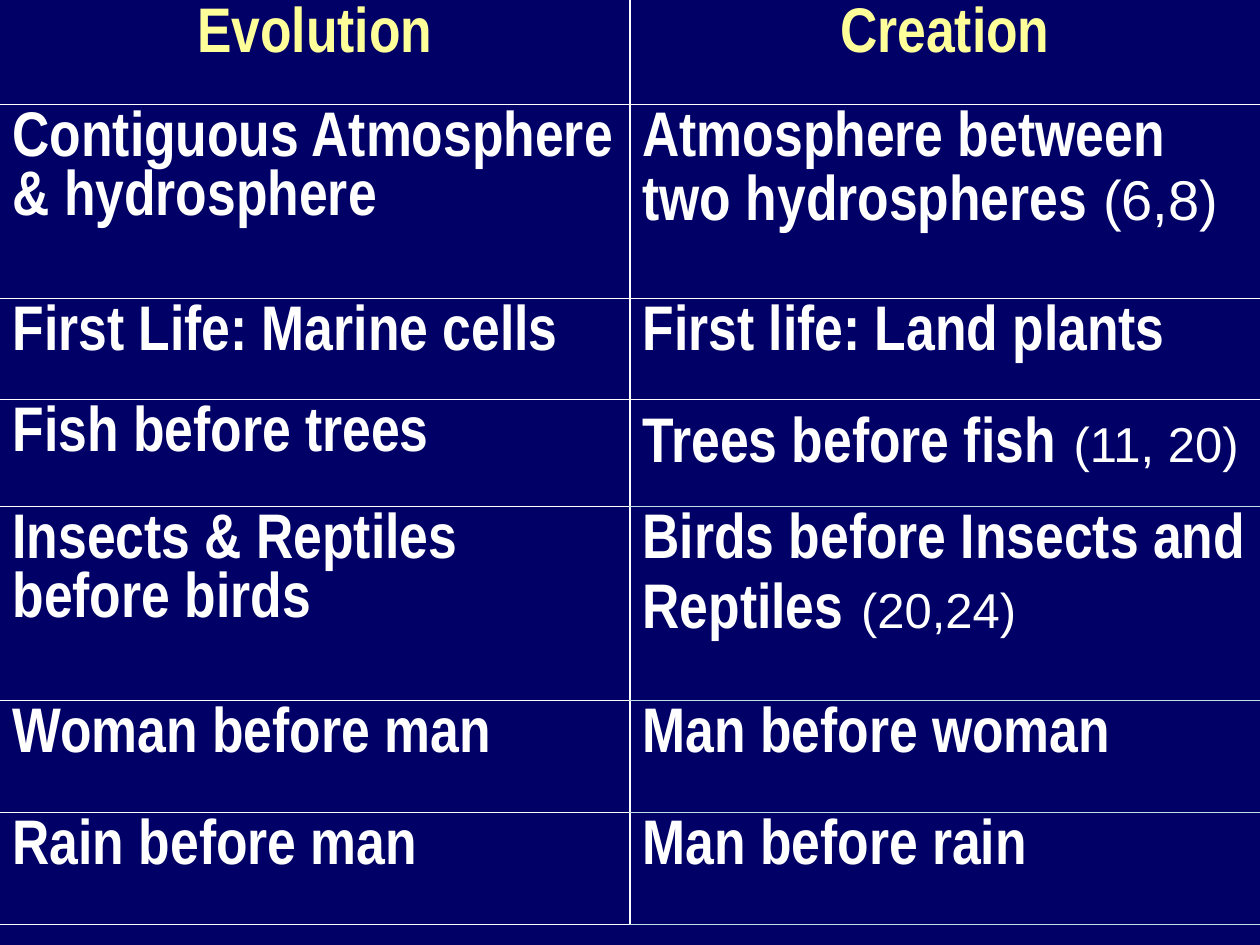
from lxml import etree
from pptx import Presentation
from pptx import util as u
from pptx.dml.color import RGBColor
from pptx.enum import text
from pptx.oxml.ns import qn

NAVY = RGBColor(0x00, 0x00, 0x66)
YELLOW = RGBColor(0xFF, 0xFF, 0x99)
WHITE = RGBColor(0xFF, 0xFF, 0xFF)
PALE_TEAL = RGBColor(0xBB, 0xE0, 0xE3)

PLAIN_TABLE_STYLE = "{2D5ABB26-0587-4C30-8999-92F81FD0307C}"
ROW_HEIGHTS = [0.83, 1.54, 0.8, 0.85, 1.54, 0.89, 0.89]
FIRST_TEAL_LINE = 4  # right-hand row lines are teal from this one down

VERSE_GAP = (" ", {"font": "Arial"})


def verse(reference, size):
    return reference, {"font": "Arial", "size": size, "bold": False}


# Each row: the evolution claim, then the pieces of the creation claim.
COMPARISONS = [
    ("Contiguous Atmosphere & hydrosphere",
     [("Atmosphere between two hydrospheres", {}), verse(" (6,8)", 32)]),
    ("First Life: Marine cells", [("First life: Land plants", {})]),
    ("Fish before trees",
     [("Trees before fish", {}), VERSE_GAP, verse("(11, 20)", 28)]),
    ("Insects & Reptiles before birds",
     [("Birds before Insects and Reptiles", {}), VERSE_GAP, verse("(20,24)", 28)]),
    ("Woman before man", [("Man before woman", {})]),
    ("Rain before man", [("Man before rain", {})]),
]


def add_text(paragraph, words, font="Arial Narrow", size=36, bold=True, color=WHITE):
    run = paragraph.add_run()
    run.text = words
    run.font.name = font
    run.font.size = u.Pt(size)
    run.font.bold = bold
    run.font.color.rgb = color


def set_space_before(paragraph, percent):
    spacing = etree.SubElement(paragraph._p.get_or_add_pPr(), qn("a:spcBef"))
    etree.SubElement(spacing, qn("a:spcPct"), val=str(percent * 1000))


def set_borders(cell, borders):
    """Draw 1 pt lines; borders maps L, R, T, B, in that order, to a colour."""
    properties = cell._tc.get_or_add_tcPr()
    for position, (side, color) in enumerate(borders.items()):
        line = etree.Element(qn(f"a:ln{side}"), w=str(u.Pt(1)))
        fill = etree.SubElement(line, qn("a:solidFill"))
        etree.SubElement(fill, qn("a:srgbClr"), val=str(color))
        properties.insert(position, line)


def inner_borders(row, column):
    """Lines between cells and under the last row; none on the outer edges."""
    def row_line(index):
        return PALE_TEAL if column == 1 and index >= FIRST_TEAL_LINE else WHITE

    borders = {"R" if column == 0 else "L": WHITE}
    if row > 0:
        borders["T"] = row_line(row)
    borders["B"] = row_line(row + 1)
    return borders


def fill_cell(cell, pieces, align, borders):
    cell.fill.background()
    paragraph = cell.text_frame.paragraphs[0]
    paragraph.alignment = align
    set_space_before(paragraph, 20)
    for words, style in pieces:
        add_text(paragraph, words, **style)
    set_borders(cell, borders)


def add_comparison_table(slide, left, top, width, height):
    heading = {"color": YELLOW}
    rows = [[[("Evolution", heading)], [("Creation", heading)]]]
    rows += [[[(evolution, {})], creation] for evolution, creation in COMPARISONS]

    frame = slide.shapes.add_table(len(rows), 2, left, top, width, height)
    table = frame.table
    table.first_row = table.horz_banding = False
    table._tbl.tblPr.find(qn("a:tableStyleId")).text = PLAIN_TABLE_STYLE

    for row, (pieces_by_column, share) in enumerate(zip(rows, ROW_HEIGHTS)):
        table.rows[row].height = int(height * share / sum(ROW_HEIGHTS))
        align = text.PP_ALIGN.CENTER if row == 0 else text.PP_ALIGN.LEFT
        for column, pieces in enumerate(pieces_by_column):
            fill_cell(table.cell(row, column), pieces, align,
                      inner_borders(row, column))


def main():
    deck = Presentation()
    deck.slide_width, deck.slide_height = u.Inches(10), u.Inches(7.5)
    slide = deck.slides.add_slide(deck.slide_layouts[6])
    slide.background.fill.solid()
    slide.background.fill.fore_color.rgb = NAVY
    add_comparison_table(slide, 0, 0, deck.slide_width, u.Inches(sum(ROW_HEIGHTS)))
    deck.save("out.pptx")


if __name__ == "__main__":
    main()
